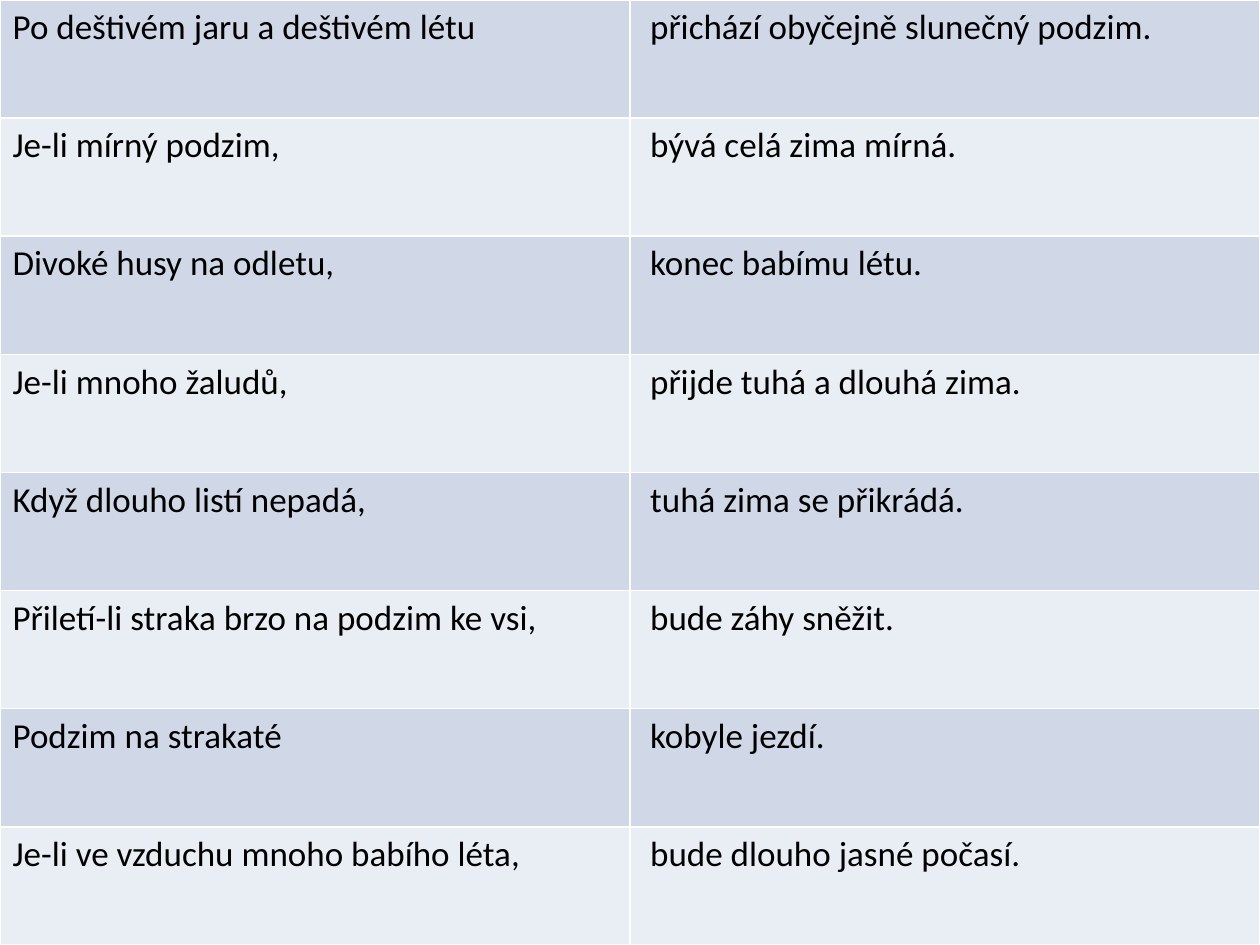
from pptx import Presentation
from pptx.dml.color import RGBColor
from pptx.oxml import parse_xml
from pptx.oxml.ns import nsdecls
from pptx.util import Inches, Pt

BLACK = RGBColor(0x00, 0x00, 0x00)
BAND_DARK = RGBColor(0xD0, 0xD8, 0xE8)
BAND_LIGHT = RGBColor(0xE9, 0xED, 0xF4)

SAYINGS = [
    ("Po deštivém jaru a deštivém létu", "přichází obyčejně slunečný podzim."),
    ("Je-li mírný podzim,", "bývá celá zima mírná."),
    ("Divoké husy na odletu,", "konec babímu létu."),
    ("Je-li mnoho žaludů,", "přijde tuhá a dlouhá zima."),
    ("Když dlouho listí nepadá,", "tuhá zima se přikrádá."),
    ("Přiletí-li straka brzo na podzim ke vsi,", "bude záhy sněžit."),
    ("Podzim na strakaté", "kobyle jezdí."),
    ("Je-li ve vzduchu mnoho babího léta,", "bude dlouho jasné počasí."),
]
MARGINS = [Inches(0.1), Inches(0.16)]


def add_borders(cell):
    """Put a white 1 pt line on each side, ahead of the cell's fill."""
    tcPr = cell._tc.get_or_add_tcPr()
    for i, side in enumerate(("lnL", "lnR", "lnT", "lnB")):
        tcPr.insert(i, parse_xml(
            f'<a:{side} {nsdecls("a")} w="{Pt(1)}"><a:solidFill>'
            f'<a:srgbClr val="FFFFFF"/></a:solidFill></a:{side}>'))


prs = Presentation()
prs.slide_width = Inches(10)
prs.slide_height = Inches(7.5)
s = prs.slides.add_slide(prs.slide_layouts[6])

# Table of weather sayings filling the slide
table = s.shapes.add_table(len(SAYINGS), 2, 0, 0,
                           prs.slide_width, prs.slide_height).table
table.first_row = False

# Banded rows: the beginning of each saying and its ending
for row, saying in enumerate(SAYINGS):
    for col, text in enumerate(saying):
        cell = table.cell(row, col)
        cell.margin_left = MARGINS[col]
        cell.fill.solid()
        cell.fill.fore_color.rgb = BAND_LIGHT if row % 2 else BAND_DARK
        add_borders(cell)
        p = cell.text_frame.paragraphs[0]
        p.text = text
        r = p.runs[0]
        r.font.name = "Calibri"
        r.font.size = Pt(20)
        r.font.color.rgb = BLACK

prs.save("out.pptx")
